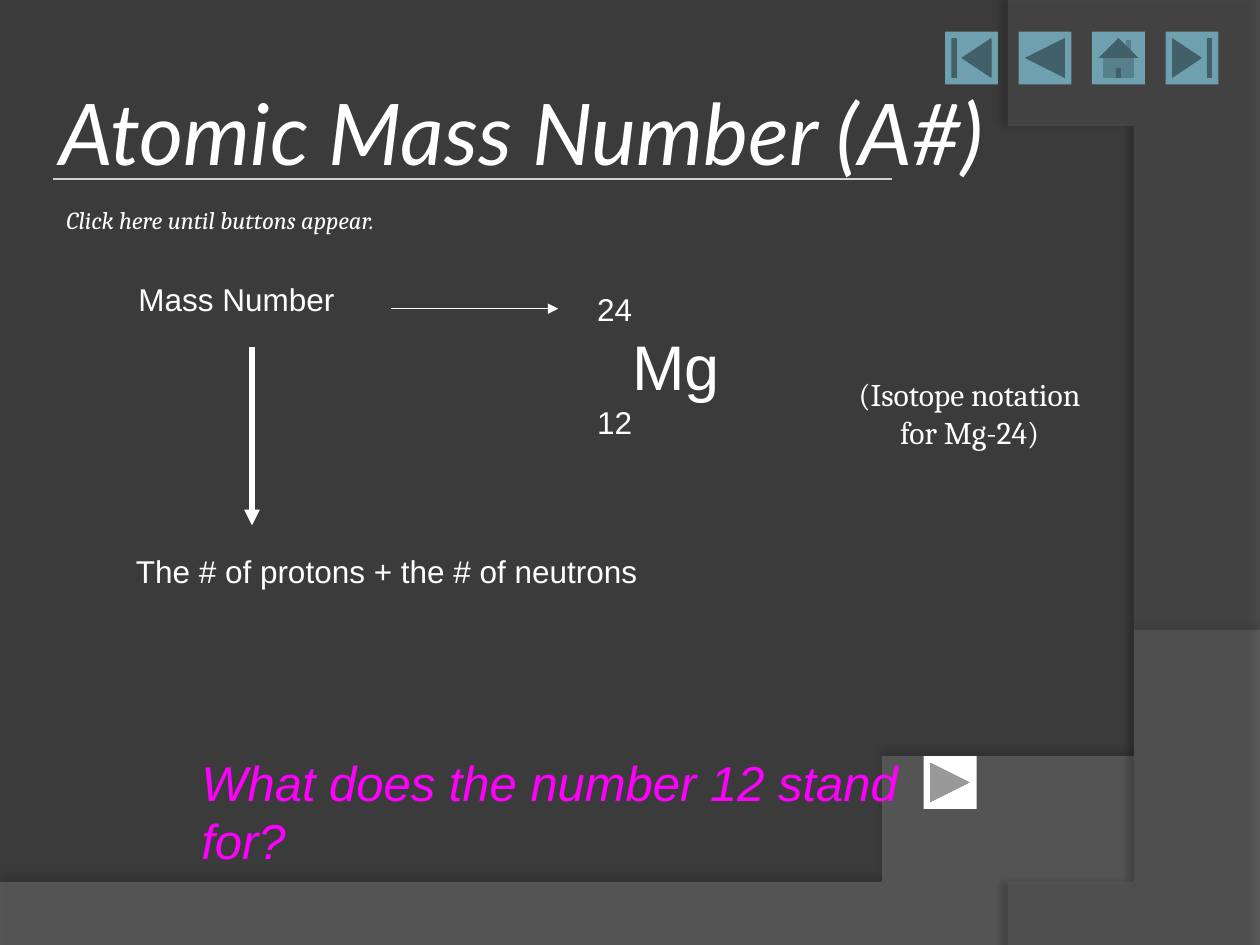
from lxml import etree
from pptx import Presentation
from pptx import util as u
from pptx.dml.color import RGBColor
from pptx.enum import shapes, text
from pptx.oxml.ns import qn

WHITE = RGBColor(0xFF, 0xFF, 0xFF)
PINK = RGBColor(0xFF, 0x00, 0xFF)
TEAL = RGBColor(0x6E, 0xA0, 0xB0)
DARK = RGBColor(0x3B, 0x3B, 0x3B)
GREY = RGBColor(0x7F, 0x7F, 0x7F)
SLATE = RGBColor(0x5E, 0x5E, 0x5E)
RULE = RGBColor(0xD4, 0xD2, 0xD0)

KIND = shapes.MSO_SHAPE
MID, TOP = text.MSO_ANCHOR.MIDDLE, text.MSO_ANCHOR.TOP
LEFT, MIDDLE = text.PP_ALIGN.LEFT, text.PP_ALIGN.CENTER

TITLE = "Atomic Mass Number (A#)"
# start, then steps of one point (line) or three points (curve);
# colour, alpha %, shadow alpha %, shadow distance, shadow angle
WAVES = [
    ((0, 7.05), [[(0, 7.5)], [(10, 7.5)], [(10, 5.2)],
                 [(5.59, 7.29), (3.91, 7.19), (0, 7.05)]],
     GREY, 45, 35, 3.5, 270),
    ((10, 0.02), [[(10, 7.5)], [(8.21, 7.5)],
                  [(9.35, 6.19), (10.18, 3), (8, 0)]],
     SLATE, 40, 45, 4, 180),
]
# start, end, colour, width, arrowhead
LINES = [
    ((0.42, 1.42), (7.08, 1.42), RULE, 1, False),
    ((2, 2.75), (2, 4.17), WHITE, 3, True),
    ((3.1, 2.45), (4.43, 2.45), WHITE, 0.75, True),
]
# box, paragraphs (words, size, indent), font, colour, italic, align, anchor, wrap
TEXTS = [
    ((4.5, 2.25, 1.4, 1.5), [("24", 18, 0.14), ("Mg", 36, 0.42), ("12", 18, 0.14)],
     "Arial", WHITE, False, LEFT, TOP, False),
    ((0.98, 4.33, 5.1, 0.5), [("The # of protons + the # of neutrons", 18, 0)],
     "Arial", WHITE, False, LEFT, TOP, False),
    ((1.5, 5.92, 5.86, 0.57), [("What does the number 12 stand for?", 28, 0)],
     "Arial", PINK, True, LEFT, TOP, True),
    ((1, 2.17, 3.52, 0.5), [("Mass Number", 18, 0)],
     "Arial", WHITE, False, LEFT, TOP, True),
    ((0.41, 1.58, 2.68, 0.33), [("Click here until buttons appear.", 14, 0)],
     "Cambria", WHITE, True, MIDDLE, MID, False),
    ((6.42, 2.83, 2.55, 0.9), [("(Isotope notation", 18, 0), ("for Mg-24)", 18, 0)],
     "Cambria", WHITE, False, MIDDLE, MID, False),
]
NAV = [KIND.ACTION_BUTTON_BEGINNING, KIND.ACTION_BUTTON_BACK_OR_PREVIOUS,
       KIND.ACTION_BUTTON_HOME, KIND.ACTION_BUTTON_END]
SIDE = 0.42
STEP = 7 / 12


def inches(vals):
    return [u.Inches(v) for v in vals]


def trace(start, steps, count=40):
    """Turn lines and cubic curves into a list of points."""
    pts = [start]
    for step in steps:
        if len(step) == 1:
            pts.append(step[0])
            continue
        ends = [pts[-1], *step]
        for i in range(1, count + 1):
            t = i / count
            mix = ((1 - t) ** 3, 3 * t * (1 - t) ** 2, 3 * t * t * (1 - t), t ** 3)
            pts.append(tuple(sum(m * p[k] for m, p in zip(mix, ends)) for k in (0, 1)))
    return pts


def add_wave(slide, start, steps, color, alpha, shade, dist, angle):
    pts = trace(start, steps)
    pen = slide.shapes.build_freeform(*pts[0], scale=u.Inches(1))
    pen.add_line_segments(pts[1:], close=True)
    wave = pen.convert_to_shape()
    wave.fill.solid()
    wave.fill.fore_color.rgb = color
    wave.line.fill.background()
    wave.shadow.inherit = False
    props = wave.element.spPr
    tint = props.find(qn("a:solidFill"))[0]
    etree.SubElement(tint, qn("a:alpha"), val=str(alpha * 1000))
    cast = etree.SubElement(
        props.find(qn("a:effectLst")), qn("a:outerShdw"), blurRad=str(u.Pt(4)),
        dist=str(u.Pt(dist)), dir=str(angle * 60000), algn="ctr", rotWithShape="0")
    black = etree.SubElement(cast, qn("a:srgbClr"), val="000000")
    etree.SubElement(black, qn("a:alpha"), val=str(shade * 1000))


def add_line(slide, start, end, color, width, arrow):
    line = slide.shapes.add_connector(
        shapes.MSO_CONNECTOR.STRAIGHT, *inches(start + end))
    line.line.color.rgb = color
    line.line.width = u.Pt(width)
    props = line.element.spPr
    if arrow:
        etree.SubElement(props.find(qn("a:ln")), qn("a:tailEnd"), type="triangle")
    etree.SubElement(props, qn("a:effectLst"))


def style(para, face, size, color, italic, align):
    para.alignment = align
    font = para.font
    font.name, font.size, font.italic = face, u.Pt(size), italic
    font.color.rgb = color


def add_text(slide, box, paras, face, color, italic, align, anchor, wrap):
    frame = slide.shapes.add_textbox(*inches(box)).text_frame
    frame.word_wrap = wrap
    frame.vertical_anchor = anchor
    frame.text = "\n".join(words for words, _, _ in paras)
    for para, (_, size, indent) in zip(frame.paragraphs, paras):
        style(para, face, size, color, italic, align)
        if indent:
            para._p.get_or_add_pPr().set("marL", str(u.Inches(indent)))


def add_button(slide, kind, left, top, color):
    key = slide.shapes.add_shape(kind, *inches((left, top, SIDE, SIDE)))
    key.fill.solid()
    key.fill.fore_color.rgb = color
    key.line.fill.background()
    key.shadow.inherit = False


def set_title(slide):
    title = slide.shapes.title
    title.left, title.top, title.width, title.height = inches((0.42, 0.67, 7.67, 0.75))
    frame = title.text_frame
    frame.text = TITLE
    frame.word_wrap = True
    frame.auto_size = text.MSO_AUTO_SIZE.NONE
    frame.vertical_anchor = MID
    frame.margin_left = frame.margin_right = u.Inches(0.05)
    frame.margin_top = frame.margin_bottom = u.Inches(0.05)
    style(frame.paragraphs[0], "Lato", 48.6, WHITE, True, LEFT)
    slide.shapes._spTree.append(title.element)  # in front of the waves


def main():
    deck = Presentation()
    deck.slide_width, deck.slide_height = inches((10, 7.5))
    slide = deck.slides.add_slide(deck.slide_layouts[5])
    slide.background.fill.solid()
    slide.background.fill.fore_color.rgb = DARK
    for wave in WAVES:
        add_wave(slide, *wave)
    set_title(slide)
    for i, kind in enumerate(NAV):
        add_button(slide, kind, 7.5 + i * STEP, 0.25, TEAL)
    add_button(slide, KIND.ACTION_BUTTON_FORWARD_OR_NEXT, 7.33, 6, WHITE)
    for line in LINES:
        add_line(slide, *line)
    for item in TEXTS:
        add_text(slide, *item)
    deck.save("out.pptx")


if __name__ == "__main__":
    main()
